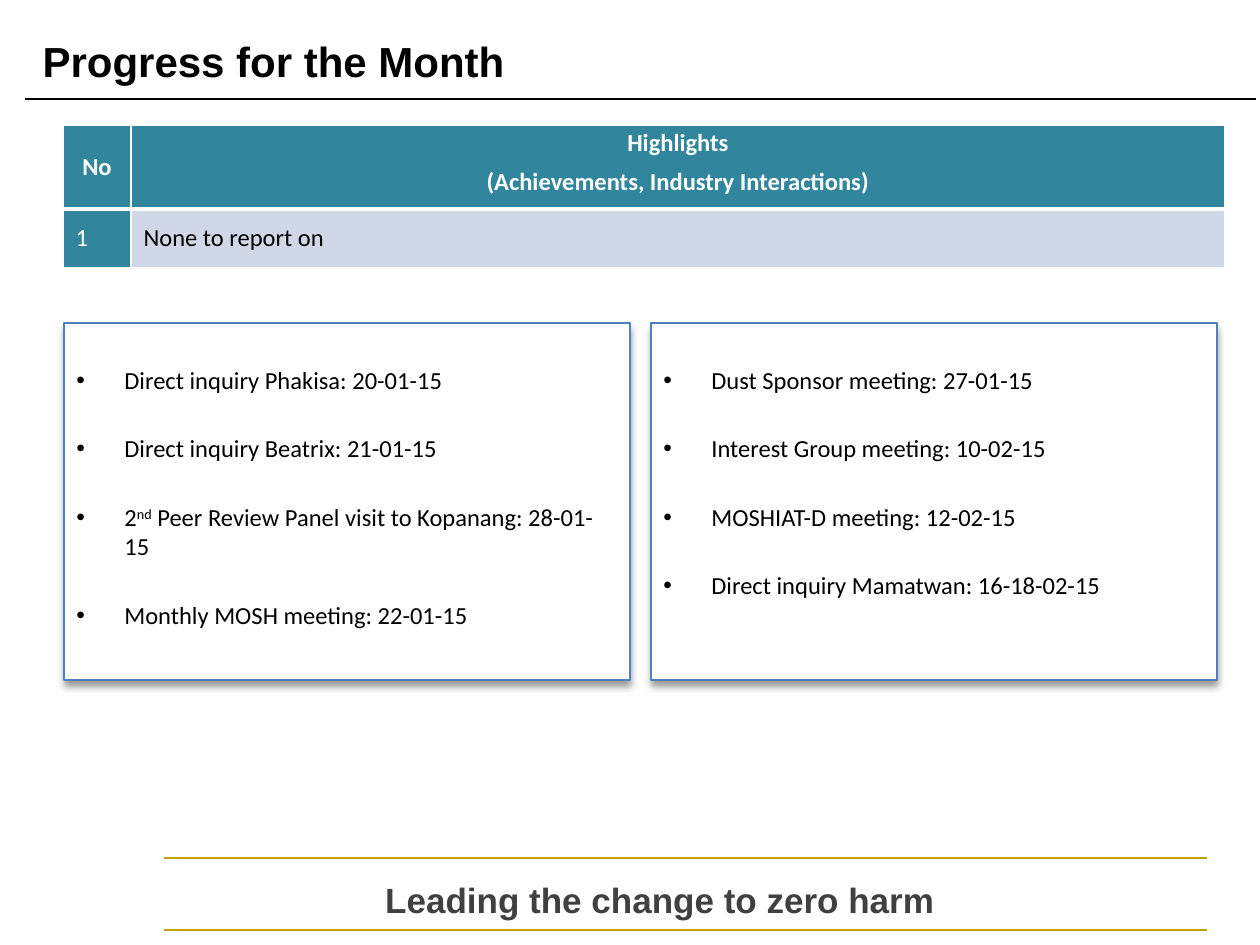
from lxml.etree import SubElement
from pptx import Presentation
from pptx.dml.color import RGBColor
from pptx.enum.shapes import MSO_CONNECTOR as CONN, MSO_SHAPE as SHAPE
from pptx.enum.text import MSO_ANCHOR as ANCHOR, PP_ALIGN as ALIGN
from pptx.oxml.ns import qn
from pptx.util import Emu, Pt

SCALE = 914400 / 126
BODY = dict(name="Calibri", size=Pt(14), bold=False)
HEADER = dict(BODY, bold=True)
TITLE = dict(name="Arial", size=Pt(24), bold=True)
SLOGAN = dict(name="Arial", size=Pt(20), bold=True)
TEAL, GOLD, WHITE, BLACK = "31859C", "C49F00", "FFFFFF", "000000"
DONE = [
    ["Direct inquiry Phakisa: 20-01-15"],
    ["Direct inquiry Beatrix: 21-01-15"],
    ["2", "nd", " Peer Review Panel visit to Kopanang: 28-01-15"],
    ["Monthly MOSH meeting: 22-01-15"],
]
PLANNED = [
    ["Dust Sponsor meeting: 27-01-15"],
    ["Interest Group meeting: 10-02-15"],
    ["MOSHIAT-D meeting: 12-02-15"],
    ["Direct inquiry Mamatwan: 16-18-02-15"],
]


def px(n):
    """Turn slide pixels into EMU."""
    return Emu(round(n * SCALE))


def rgb(code):
    """Turn a hex string into a colour."""
    return RGBColor.from_string(code)


def set_all(obj, values):
    """Set each attribute of an object from a dict."""
    for name, value in values.items():
        setattr(obj, name, value)


def sub(parent, tag, **attrs):
    """Append an XML element with attributes."""
    return SubElement(parent, qn(tag), {k: str(v) for k, v in attrs.items()})


def add_runs(p, texts, fmt, color):
    """Write runs into a paragraph, raising ordinal endings."""
    for text in texts:
        r = p.add_run()
        r.text = text
        set_all(r.font, fmt)
        r.font.color.rgb = rgb(color)
        if text == "nd":
            r.font._element.set("baseline", "30000")


def add_line(s, x1, x2, y, color, width):
    """Draw a horizontal rule."""
    ln = s.shapes.add_connector(CONN.STRAIGHT, px(x1), px(y), px(x2), px(y))
    ln.line.color.rgb = rgb(color)
    ln.line.width = Pt(width)
    sub(ln._element.spPr, "a:effectLst")


def add_title(s, text):
    """Place and format the title placeholder."""
    sp = s.shapes.title
    set_all(sp, dict(left=px(30), top=px(21), width=px(1240), height=px(79)))
    tf = sp.text_frame
    set_all(tf, dict(vertical_anchor=ANCHOR.MIDDLE, word_wrap=True))
    p = tf.paragraphs[0]
    p.alignment = ALIGN.LEFT
    add_runs(p, [text], TITLE, BLACK)


def add_slogan(s, text):
    """Write the centred slogan between the footer rules."""
    tf = s.shapes.add_textbox(px(207), px(868), px(906), px(49)).text_frame
    set_all(tf, dict(word_wrap=True, margin_top=px(11)))
    p = tf.paragraphs[0]
    p.alignment = ALIGN.CENTER
    add_runs(p, [text], SLOGAN, "404040")


def fill_cell(cell, lines, fill, fmt, color, align, bottom):
    """Fill a table cell and give it white borders."""
    cell.vertical_anchor = ANCHOR.MIDDLE
    tf = cell.text_frame
    for i, line in enumerate(lines):
        p = tf.add_paragraph() if i else tf.paragraphs[0]
        p.alignment = align
        if i:
            p.space_before = Pt(7)
        if len(lines) > 1:
            p.line_spacing = 0.9
        add_runs(p, [line], fmt, color)
    tcPr = cell._tc.get_or_add_tcPr()
    for side, width in dict(L=1, R=1, T=1, B=bottom).items():
        ln = sub(tcPr, "a:ln" + side, w=Pt(width))
        sub(sub(ln, "a:solidFill"), "a:srgbClr", val=WHITE)
    cell.fill.solid()
    cell.fill.fore_color.rgb = rgb(fill)


def add_highlights(s):
    """Build the highlights table."""
    table = s.shapes.add_table(2, 2, px(63), px(125), px(1162), px(143)).table
    for col, width in zip(table.columns, (68, 1094)):
        col.width = px(width)
    for row, height in zip(table.rows, (84, 59)):
        row.height = px(height)
    heading = ["Highlights", "(Achievements, Industry Interactions)"]
    fill_cell(table.cell(0, 0), ["No"], TEAL, HEADER, WHITE, ALIGN.CENTER, 3)
    fill_cell(table.cell(0, 1), heading, TEAL, HEADER, WHITE, ALIGN.CENTER, 3)
    set_all(table.cell(0, 1), dict.fromkeys(
        ("margin_left", "margin_top", "margin_right", "margin_bottom"), px(5)))
    table.cell(0, 1).vertical_anchor = ANCHOR.TOP
    fill_cell(table.cell(1, 0), ["1"], TEAL, BODY, WHITE, ALIGN.LEFT, 1)
    fill_cell(table.cell(1, 1), ["None to report on"], "D0D8E8", BODY, BLACK, ALIGN.LEFT, 1)


def add_shadow(sp):
    """Cast a soft shadow below a shape."""
    effects = sub(sp._element.spPr, "a:effectLst")
    shadow = sub(effects, "a:outerShdw", blurRad=Pt(4), dist=Pt(3), dir=5400000, rotWithShape=0)
    sub(sub(shadow, "a:srgbClr", val=BLACK), "a:alpha", val=40000)


def add_bullet(p):
    """Give a paragraph a hanging bullet."""
    pPr = p._p.get_or_add_pPr()
    pPr.set("marL", str(px(48)))
    pPr.set("indent", str(px(-48)))
    sub(pPr, "a:buFont", typeface="Arial")
    sub(pPr, "a:buChar", char="•")


def add_meetings(s, x, items):
    """Draw a shadowed box with a bulleted list of meetings."""
    sp = s.shapes.add_shape(SHAPE.RECTANGLE, px(x), px(323), px(566), px(357))
    sp.fill.solid()
    sp.fill.fore_color.rgb = rgb(WHITE)
    sp.line.color.rgb = rgb("4F81BD")
    sp.line.width = Pt(0.75)
    add_shadow(sp)
    tf = sp.text_frame
    set_all(tf, dict(word_wrap=True, vertical_anchor=ANCHOR.TOP, margin_top=px(42)))
    for i, texts in enumerate(items):
        p = tf.add_paragraph() if i else tf.paragraphs[0]
        p.alignment = ALIGN.LEFT
        if i:
            p.space_before = Pt(22.3)
        add_bullet(p)
        set_all(p.font, BODY)
        p.font.color.rgb = rgb(BLACK)
        add_runs(p, texts, BODY, BLACK)


def main():
    """Build and save the slide."""
    prs = Presentation()
    set_all(prs, dict(slide_width=px(1260), slide_height=px(945)))
    s = prs.slides.add_slide(prs.slide_layouts[5])
    add_line(s, 25, 1256, 99, BLACK, 0.75)
    add_title(s, "Progress for the Month")
    add_highlights(s)
    for y in (930, 858):
        add_line(s, 164, 1207, y, GOLD, 1)
    add_slogan(s, "Leading the change to zero harm")
    for x, items in ((64, DONE), (651, PLANNED)):
        add_meetings(s, x, items)
    prs.save("out.pptx")


if __name__ == "__main__":
    main()
